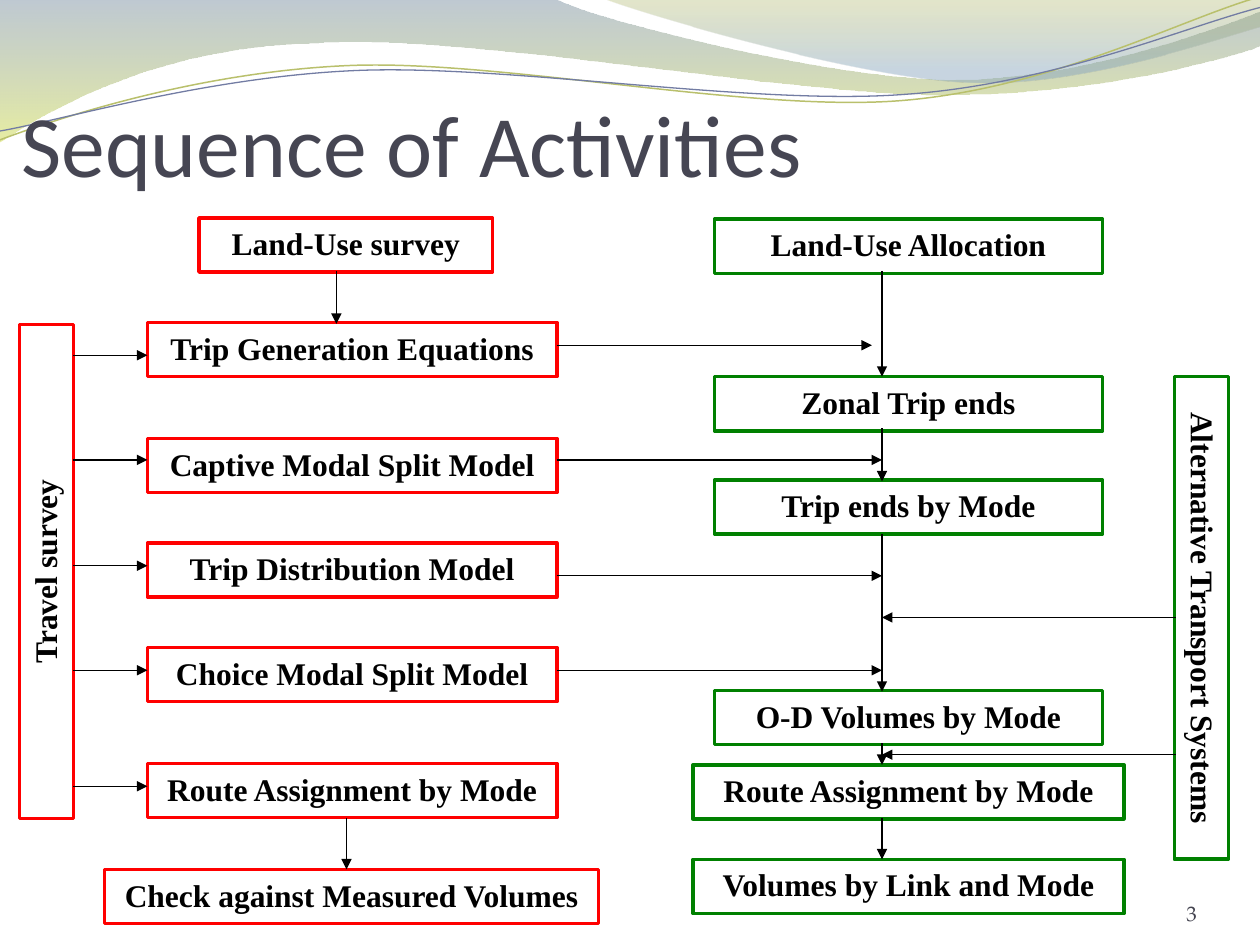
from dataclasses import dataclass
from math import cos, radians, sin

from lxml.etree import SubElement
from pptx import Presentation
from pptx.dml.color import RGBColor
from pptx.enum.shapes import MSO_CONNECTOR, MSO_SHAPE
from pptx.enum.text import MSO_ANCHOR, PP_ALIGN
from pptx.oxml.ns import qn
from pptx.util import Inches, Pt


@dataclass(frozen=True)
class Theme:
    survey: str = "FF0000"
    forecast: str = "008000"
    ink: str = "000000"
    title: str = "464653"
    number: str = "43434F"
    olive: str = "B9C06C"
    violet: str = "727CA3"
    box_font: str = "Times New Roman"
    title_font: str = "Calibri"
    number_font: str = "TeX Gyre Pagella"
    box_size: float = 18
    title_size: float = 50
    number_size: float = 12
    box_line: float = 2
    arrow_line: float = 0.75


THEME = Theme()
BOX_HEIGHT = 0.43
WAVE_TILT = 2.7

# Header bands: start, segments of 2 (line) or 6 (Bezier) numbers, and
# gradient stops as (position, colour, opacity percent)
BANDS = [
    ((0, 0),
     [(4.4, -0.01), (4.76, 0.17, 6.64, 0.63, 7.58, 0.63),
      (8.53, 0.63, 9.58, 0.26, 10, 0.09), (10.01, 0.36),
      (9.83, 0.44, 8.7, 0.76, 7.46, 0.75),
      (6.22, 0.75, 3.82, 0.28, 2.57, 0.34),
      (1.29, 0.36, 0.46, 0.83, -0.01, 1.13), (0, 0)],
     [(0, "72889B", 45), (1, "D3DE57", 55)]),
    ((4.79, -0.01),
     [(5.09, 0.11, 6.82, 0.62, 7.69, 0.65),
      (8.56, 0.69, 9.61, 0.32, 10, 0.21), (10, 0), (4.79, -0.01)],
     [(0, "A4AC50", 30), (0.8, "84A3BD", 45)]),
]
# Waves: start, segments, centre, colour, line width
WAVES = [
    ((0, 1.11),
     [(0.48, 0.93, 1.58, 0.57, 2.77, 0.52),
      (3.95, 0.47, 5.93, 0.89, 7.13, 0.8),
      (8.33, 0.71, 9.38, 0.15, 9.98, -0.02)],
     (4.99, 0.58), THEME.olive, 0.85),
    ((0, 1.04),
     [(0.47, 0.96, 1.64, 0.61, 2.83, 0.56),
      (4.03, 0.51, 5.97, 0.84, 7.17, 0.75),
      (8.36, 0.67, 9.41, 0.21, 10, 0.06)],
     (5, 0.59), THEME.violet, 0.75),
]

# Boxes: text, left, top, width, rotation
SURVEY_BOXES = [
    ("Land-Use survey", 1.58, 1.73, 2.33, 0),
    ("Travel survey", -1.59, 4.32, 3.92, 270),
    ("Trip Generation Equations", 1.17, 2.56, 3.25, 0),
    ("Captive Modal Split Model", 1.17, 3.48, 3.25, 0),
    ("Trip Distribution Model", 1.17, 4.31, 3.25, 0),
    ("Choice Modal Split Model", 1.17, 5.14, 3.25, 0),
    ("Route Assignment by Mode", 1.17, 6.06, 3.25, 0),
    ("Check against Measured Volumes", 0.83, 6.9, 3.92, 0),
]
FORECAST_BOXES = [
    ("Land-Use Allocation", 5.67, 1.74, 3.08, 0),
    ("Zonal Trip ends", 5.67, 2.99, 3.08, 0),
    ("Trip ends by Mode", 5.67, 3.81, 3.08, 0),
    ("O-D Volumes by Mode", 5.67, 5.48, 3.08, 0),
    ("Route Assignment by Mode", 5.5, 6.07, 3.42, 0),
    ("Volumes by Link and Mode", 5.5, 6.82, 3.42, 0),
    ("Alternative Transport Systems", 7.62, 4.69, 3.83, 90),
]

# Arrows: horizontal as (x from, x to, y), vertical as (x, y from, y to)
ACROSS = [(0.58, 1.17, y) for y in (2.82, 3.65, 4.49, 5.32, 6.24)]
ACROSS += [(4.42, 6.92, 2.74)]
ACROSS += [(4.42, 7, y) for y in (3.65, 4.57, 5.32)]
ACROSS += [(9.33, 7, y) for y in (4.9, 5.99)]
DOWN = [(2.67, 2.15, 2.57), (2.75, 6.49, 6.9),
        (7, 2.15, 2.99), (7, 3.4, 3.82), (7, 4.24, 5.49),
        (7, 5.9, 6.07), (7, 6.49, 6.82)]


def pairs(segment):
    return list(zip(segment[::2], segment[1::2]))


def turn(points, center, degrees):
    """Turn points clockwise about a centre."""
    cx, cy = center
    c, s = cos(radians(degrees)), sin(radians(degrees))
    return [(cx + (x - cx)*c - (y - cy)*s, cy + (x - cx)*s + (y - cy)*c)
            for x, y in points]


def add_outline(page, points, segments, close):
    """Draw through all points, then join each Bezier segment's three."""
    points = [(Inches(x), Inches(y)) for x, y in points]
    builder = page.shapes.build_freeform(*points[0])
    builder.add_line_segments(points[1:], close=close)
    shape = builder.convert_to_shape()
    shape.shadow.inherit = False
    steps = iter(list(shape._element.iter(qn("a:lnTo"))))
    for segment in segments:
        group = [next(steps) for _ in pairs(segment)]
        if len(group) == 3:
            group[0].tag = qn("a:cubicBezTo")
            for step in group[1:]:
                group[0].append(step[0])
                step.getparent().remove(step)
    return shape


def add_band(page, start, segments, stops):
    points = [start] + [point for part in segments for point in pairs(part)]
    band = add_outline(page, points, segments, close=True)
    band.line.fill.background()
    band.fill.gradient()
    band.fill.gradient_angle = 270
    for stop, (position, color, _) in zip(band.fill.gradient_stops, stops):
        stop.position = position
        stop.color.rgb = RGBColor.from_string(color)
    colors = band._element.spPr.iter(qn("a:srgbClr"))
    for element, (_, _, opacity) in zip(colors, stops):
        SubElement(element, qn("a:alpha"), val=str(opacity * 1000))


def set_line(shape, color, width):
    shape.line.color.rgb = RGBColor.from_string(color)
    shape.line.width = Pt(width)


def add_wave(page, start, segments, center, color, width):
    points = [start] + [point for part in segments for point in pairs(part)]
    level = turn(points, center, WAVE_TILT)
    wave = add_outline(page, level, segments, close=False)
    wave.rotation = 360 - WAVE_TILT
    wave.fill.background()
    set_line(wave, color, width)


def set_text(shape, text, font, size, color, align, anchor, bold=False):
    frame = shape.text_frame
    frame.word_wrap = True
    frame.text = text
    frame.vertical_anchor = anchor
    para = frame.paragraphs[0]
    para.alignment = align
    span = para.runs[0]
    span.font.name = font
    span.font.size = Pt(size)
    span.font.bold = bold
    span.font.color.rgb = RGBColor.from_string(color)


def add_box(page, text, left, top, width, rotation, color):
    box = page.shapes.add_shape(MSO_SHAPE.RECTANGLE, Inches(left), Inches(top),
                                Inches(width), Inches(BOX_HEIGHT))
    box.rotation = rotation
    box.shadow.inherit = False
    box.fill.background()
    set_line(box, color, THEME.box_line)
    set_text(box, text, THEME.box_font, THEME.box_size, THEME.ink,
             PP_ALIGN.CENTER, MSO_ANCHOR.TOP, bold=True)


def add_arrow(page, *ends):
    arrow = page.shapes.add_connector(MSO_CONNECTOR.STRAIGHT,
                                      *map(Inches, ends))
    set_line(arrow, THEME.ink, THEME.arrow_line)
    SubElement(arrow.line._get_or_add_ln(), qn("a:tailEnd"), type="triangle")
    SubElement(arrow._element.spPr, qn("a:effectLst"))


def add_label(page, text, place, font, size, color, align, inset=0):
    label = page.shapes.add_textbox(*map(Inches, place))
    frame = label.text_frame
    frame.margin_left = frame.margin_right = frame.margin_bottom = 0
    frame.margin_top = Inches(inset)
    set_text(label, text, font, size, color, align, MSO_ANCHOR.BOTTOM)


def main():
    deck = Presentation()
    deck.slide_width, deck.slide_height = Inches(10), Inches(7.5)
    page = deck.slides.add_slide(deck.slide_layouts[6])

    # Header decoration
    for band in BANDS:
        add_band(page, *band)
    for wave in WAVES:
        add_wave(page, *wave)

    # Flow chart
    for boxes, color in ((SURVEY_BOXES, THEME.survey),
                         (FORECAST_BOXES, THEME.forecast)):
        for box in boxes:
            add_box(page, *box, color)
    for x1, x2, y in ACROSS:
        add_arrow(page, x1, y, x2, y)
    for x, y1, y2 in DOWN:
        add_arrow(page, x, y1, x, y2)

    # Title and page number
    add_label(page, "Sequence of Activities", (0.17, 0.3, 9.67, 1.25),
              THEME.title_font, THEME.title_size, THEME.title,
              PP_ALIGN.LEFT, inset=0.05)
    add_label(page, "3", (8.67, 6.95, 0.83, 0.4), THEME.number_font,
              THEME.number_size, THEME.number, PP_ALIGN.RIGHT)
    deck.save("out.pptx")


if __name__ == "__main__":
    main()
